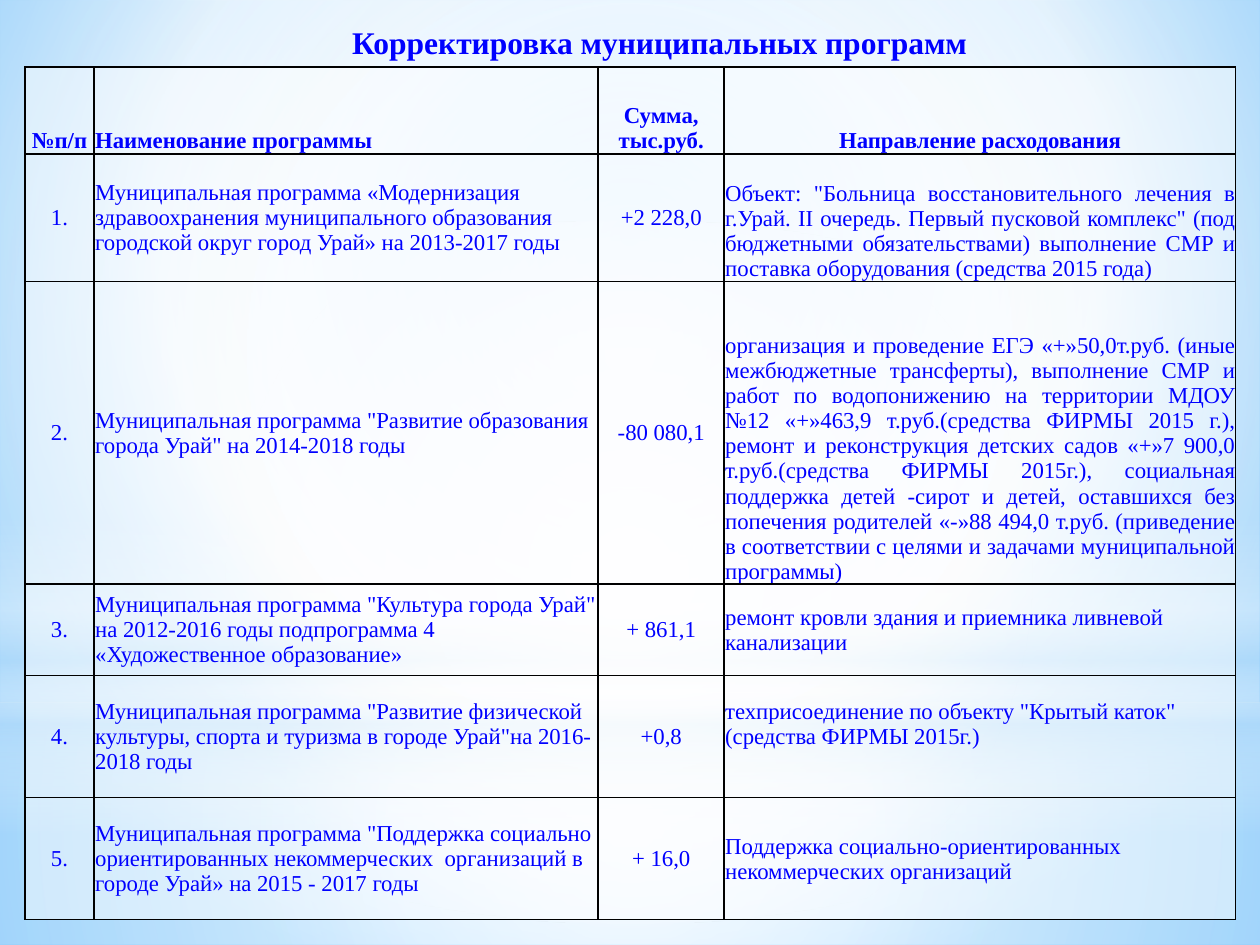
from lxml import etree
from pptx import Presentation
from pptx.dml.color import RGBColor
from pptx.enum import shapes, text
from pptx.oxml import ns
from pptx.util import Cm, Pt

BLUE = RGBColor(0x00, 0x00, 0xFF)
BLACK = RGBColor(0x00, 0x00, 0x00)
WHITE = RGBColor(0xFF, 0xFF, 0xFF)
PALE = RGBColor(0xB4, 0xDC, 0xFA)
SKY = RGBColor(0x9E, 0xD5, 0xFF)
DEEP = RGBColor(0x5B, 0xB9, 0xFF)
FONT = "Times New Roman"
LEFT, MID, JUST = text.PP_ALIGN.LEFT, text.PP_ALIGN.CENTER, text.PP_ALIGN.JUSTIFY
LOW, HALF = text.MSO_ANCHOR.BOTTOM, text.MSO_ANCHOR.MIDDLE

COLS = [1.4, 10.16, 2.54, 10.31]
ROWS = [1.75, 2.57, 6.1, 1.85, 2.46, 2.46]
HEAD = ["№п/п", "Наименование программы", "Сумма, тыс.руб.", "Направление расходования"]
ITEMS = [
    ["Муниципальная программа «Модернизация здравоохранения муниципального "
     "образования городской округ город Урай» на 2013-2017 годы",
     "+2 228,0",
     'Объект: "Больница восстановительного лечения в г.Урай. II очередь. Первый '
     'пусковой комплекс" (под бюджетными обязательствами) выполнение СМР и поставка '
     "оборудования (средства 2015 года)"],
    ['Муниципальная программа "Развитие образования города Урай" на 2014-2018 годы',
     "-80 080,1",
     "организация и проведение ЕГЭ «+»50,0т.руб. (иные межбюджетные трансферты), "
     "выполнение СМР и работ по водопонижению на территории МДОУ №12 «+»463,9 "
     "т.руб.(средства ФИРМЫ 2015 г.), ремонт и реконструкция детских садов «+»7 900,0 "
     "т.руб.(средства ФИРМЫ 2015г.), социальная поддержка детей -сирот и детей, "
     "оставшихся без попечения родителей «-»88 494,0 т.руб. (приведение в соответствии "
     "с целями и задачами муниципальной программы)"],
    ['Муниципальная программа "Культура города Урай" на 2012-2016 годы '
     "подпрограмма 4 «Художественное образование»",
     "+ 861,1",
     "ремонт кровли здания и приемника ливневой канализации"],
    ['Муниципальная программа "Развитие физической культуры, спорта и туризма '
     'в городе Урай"на 2016-2018 годы',
     "+0,8",
     'техприсоединение по объекту "Крытый каток" (средства ФИРМЫ 2015г.)'],
    ['Муниципальная программа "Поддержка социально ориентированных '
     "некоммерческих  организаций в городе Урай» на 2015 - 2017 годы",
     "+ 16,0",
     "Поддержка социально-ориентированных некоммерческих организаций"],
]


def add(parent, tag, **attrs):
    node = etree.SubElement(parent, ns.qn("a:" + tag))
    for key, value in attrs.items():
        node.set(key, str(value))
    return node


def tint(parent, color, alpha=100):
    node = add(parent, "srgbClr", val=color)
    if alpha < 100:
        add(node, "alpha", val=alpha * 1000)


def blend(host, stops, focus=None):
    """Swap the solid fill of host for a gradient: round about focus, or top to bottom."""
    old = host.find(ns.qn("a:solidFill"))
    grad = etree.Element(ns.qn("a:gradFill"), rotWithShape="1")
    marks = add(grad, "gsLst")
    for place, *color in stops:
        tint(add(marks, "gs", pos=place * 1000), *color)
    if focus:
        ring = add(grad, "path", path="circle")
        add(ring, "fillToRect", **{side: part * 1000 for side, part in zip("ltrb", focus)})
    else:
        add(grad, "lin", ang=90 * 60000, scaled=0)
    host.replace(old, grad)


def backdrop(slide, width):
    slide.background.fill.solid()
    blend(slide.element.find(".//" + ns.qn("p:bgPr")),
          [(0, SKY), (60, WHITE), (100, DEEP)], (20, 10, 20, 60))
    rect, oval = shapes.MSO_SHAPE.RECTANGLE, shapes.MSO_SHAPE.OVAL
    hub = (50, 50, 50, 50)
    layers = [
        (rect, 14.17, 4.88, [(0, WHITE, 91), (37, WHITE, 76), (100, PALE, 79)], hub),
        (rect, 0, 14.17, [(0, WHITE, 89), (48, WHITE, 62), (100, PALE, 79)], hub),
        (rect, 10.46, 6.35, [(0, WHITE, 0), (29, WHITE, 30), (45, PALE, 40),
                             (55, WHITE, 26), (65, PALE, 60), (100, WHITE, 0)], None),
        (oval, 4.45, 14.17, [(0, WHITE), (56, WHITE, 0)], hub),
    ]
    for kind, top, height, stops, focus in layers:
        layer = slide.shapes.add_shape(kind, 0, Cm(top), Cm(width), Cm(height))
        layer.shadow.inherit = False
        layer.line.fill.background()
        layer.fill.solid()
        blend(layer.element.spPr, stops, focus)


def write(frame, words, size, align, bold=False):
    para = frame.paragraphs[0]
    para.alignment = align
    run = para.add_run()
    run.text = words
    font = run.font
    font.name, font.size, font.bold = FONT, Pt(size), bold
    font.color.rgb = BLUE


def title(slide, left, top, width, height):
    box = slide.shapes.add_textbox(Cm(left), Cm(top), Cm(width), Cm(height))
    box.text_frame.word_wrap = True
    write(box.text_frame, "Корректировка муниципальных программ", 18, MID, True)


def dress(cell):
    """Give a cell black borders, a half-clear white fill and narrow margins."""
    props = cell._tc.get_or_add_tcPr()
    for side in "LRTB":
        line = add(props, "ln" + side, w=Pt(1))
        tint(add(line, "solidFill"), BLACK)
    tint(add(props, "solidFill"), WHITE, 47)
    cell.margin_left = cell.margin_right = cell.margin_top = Cm(0.02)
    cell.margin_bottom = 0


def programs(slide, left, top):
    rows = [HEAD] + [[f"{n}."] + item for n, item in enumerate(ITEMS, 1)]
    table = slide.shapes.add_table(len(ROWS), len(COLS), Cm(left), Cm(top),
                                   Cm(sum(COLS)), Cm(sum(ROWS))).table
    table.first_row = table.horz_banding = False
    for col, width in zip(table.columns, COLS):
        col.width = Cm(width)
    for r, (height, row) in enumerate(zip(ROWS, rows)):
        table.rows[r].height = Cm(height)
        for c, words in enumerate(row):
            cell = table.cell(r, c)
            dress(cell)
            long = c == 3 and r in (1, 2)
            align = JUST if long else MID if c in (0, 2) or (r, c) == (0, 3) else LEFT
            cell.vertical_anchor = LOW if r == 0 or long else HALF
            write(cell.text_frame, words, 13, align, r == 0)
    table.cell(4, 3).margin_bottom = Cm(0.5)


def main():
    deck = Presentation()
    deck.slide_width, deck.slide_height = Cm(25.4), Cm(19.05)
    slide = deck.slides.add_slide(deck.slide_layouts[6])
    backdrop(slide, 25.4)
    programs(slide, 0.5, 1.35)
    title(slide, 2.1, 0.33, 22.4, 1.02)
    deck.save("out.pptx")


if __name__ == "__main__":
    main()
